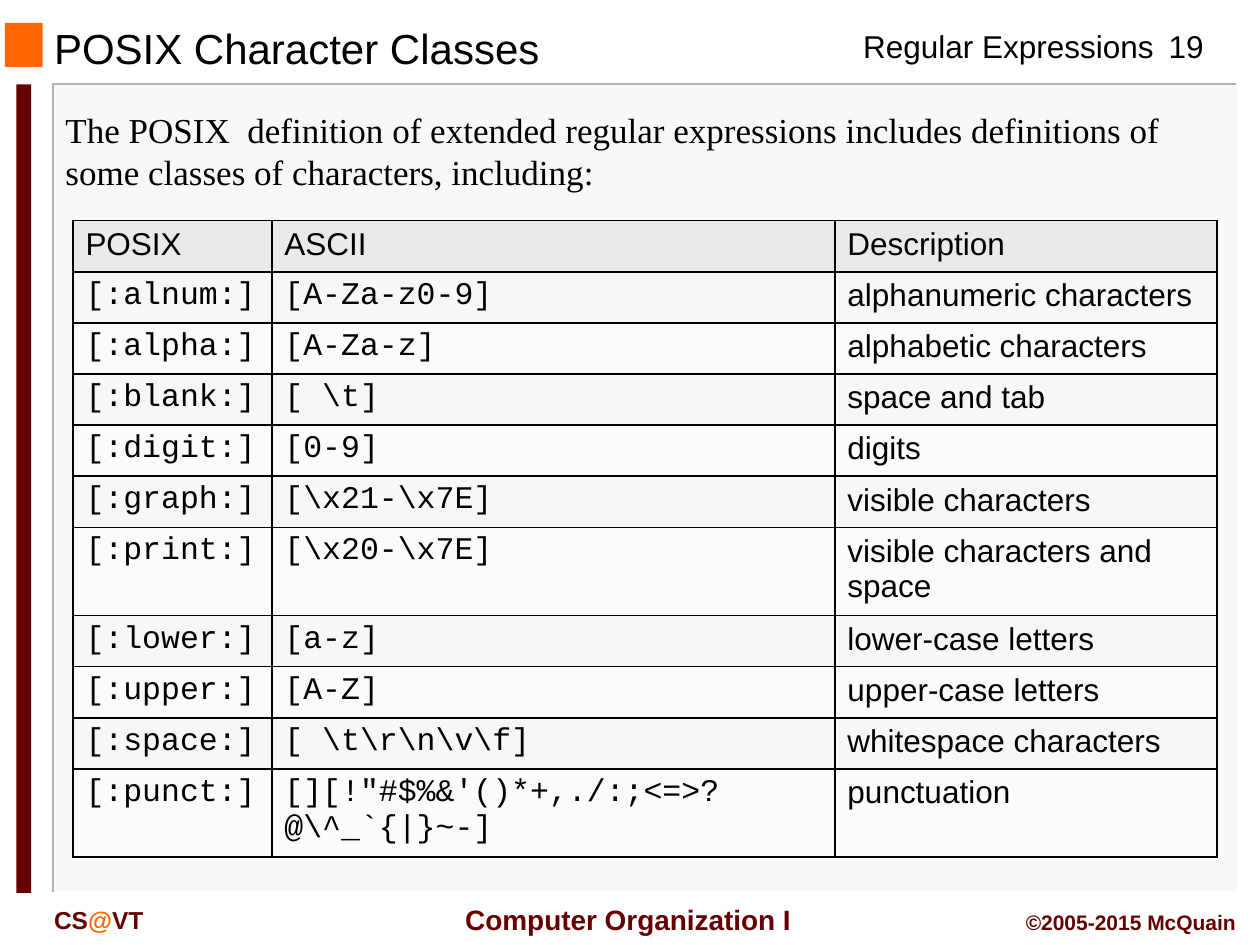
from pptx import Presentation
from pptx.dml.color import RGBColor
from pptx.enum.shapes import MSO_SHAPE
from pptx.enum.text import MSO_ANCHOR, PP_ALIGN
from pptx.oxml import parse_xml
from pptx.oxml.ns import nsdecls
from pptx.util import Cm, Pt

HUES = {
    "ink": "000000", "white": "FFFFFF", "panel": "F8F8F8", "edge": "B2B2B2",
    "orange": "FF6600", "maroon": "660000",
    "head": "EAEAEA", "odd": "F7F7F7", "even": "FBFBFB",
}

ROWS = [
    ("POSIX", "ASCII", "Description"),
    ("[:alnum:]", "[A-Za-z0-9]", "alphanumeric characters"),
    ("[:alpha:]", "[A-Za-z]", "alphabetic characters"),
    ("[:blank:]", r"[ \t]", "space and tab"),
    ("[:digit:]", "[0-9]", "digits"),
    ("[:graph:]", r"[\x21-\x7E]", "visible characters"),
    ("[:print:]", r"[\x20-\x7E]", "visible characters and space"),
    ("[:lower:]", "[a-z]", "lower-case letters"),
    ("[:upper:]", "[A-Z]", "upper-case letters"),
    ("[:space:]", r"[ \t\r\n\v\f]", "whitespace characters"),
    ("[:punct:]", r"""[][!"#$%&'()*+,./:;<=>?@\^_`{|}~-]""", "punctuation"),
]
TALL = {6, 10}  # rows whose text takes two lines


def hue(name):
    return RGBColor.from_string(HUES[name])


def write(para, text, font="Arial", size=18, color="ink", bold=False):
    run = para.add_run()
    run.text = text
    run.font.name = font
    run.font.size = Pt(size)
    run.font.bold = bold
    run.font.color.rgb = hue(color)


class Page:
    """Holds the table style and the current slide."""
    mono = "Courier New"
    rule = 12700  # cell border width, EMU

    def __init__(self, slide):
        self.slide = slide
        self.shapes = slide.shapes

    def block(self, x, y, w, h, color):
        box = self.shapes.add_shape(MSO_SHAPE.RECTANGLE, Cm(x), Cm(y), Cm(w), Cm(h))
        box.shadow.inherit = False
        box.fill.solid()
        box.fill.fore_color.rgb = hue(color)
        box.line.fill.background()

    def edge(self, points, color):
        start, *rest = [(Cm(x), Cm(y)) for x, y in points]
        pen = self.shapes.build_freeform(*start)
        pen.add_line_segments(rest, close=False)
        line = pen.convert_to_shape()
        line.shadow.inherit = False
        line.fill.background()
        line.line.color.rgb = hue(color)
        line.line.width = Pt(1)

    def label(self, x, y, w, h, *parts, align=PP_ALIGN.LEFT,
              anchor=MSO_ANCHOR.TOP, wrap=True, **style):
        """Each part is a string, or a string with its own colour."""
        frame = self.shapes.add_textbox(Cm(x), Cm(y), Cm(w), Cm(h)).text_frame
        frame.word_wrap = wrap
        frame.vertical_anchor = anchor
        para = frame.paragraphs[0]
        para.alignment = align
        for part in parts:
            if isinstance(part, tuple):
                write(para, part[0], **{**style, "color": part[1]})
            else:
                write(para, part, **style)

    def border(self, cell):
        props = cell._tc.get_or_add_tcPr()
        for spot, side in enumerate("LRTB"):
            props.insert(spot, parse_xml(
                f'<a:ln{side} {nsdecls("a")} w="{self.rule}"><a:solidFill>'
                f'<a:srgbClr val="{HUES["ink"]}"/></a:solidFill></a:ln{side}>'))

    def grid(self, x, y, widths, rows):
        highs = [1.78 if i in TALL else 1.03 for i in range(len(rows))]
        table = self.shapes.add_table(len(rows), len(widths), Cm(x), Cm(y),
                                      Cm(sum(widths)), Cm(sum(highs))).table
        for col, wide in zip(table.columns, widths):
            col.width = Cm(wide)
        for i, (row, high) in enumerate(zip(table.rows, highs)):
            row.height = Cm(high)
            shade = "head" if i == 0 else "odd" if i % 2 else "even"
            for j, cell in enumerate(row.cells):
                cell.fill.solid()
                cell.fill.fore_color.rgb = hue(shade)
                self.border(cell)
                code = i > 0 and j < 2
                write(cell.text_frame.paragraphs[0], rows[i][j],
                      font=self.mono if code else "Arial")


def main():
    deck = Presentation()
    deck.slide_width, deck.slide_height = Cm(25.4), Cm(19.05)
    page = Page(deck.slides.add_slide(deck.slide_layouts[6]))

    # Panel with its dark and light edges
    top, foot = 1.7, 17.98
    page.block(1.09, top, 23.88, foot - top, "panel")
    page.edge([(24.92, top), (1.07, top), (1.07, foot)], "edge")
    page.edge([(24.97, top), (24.97, foot), (1.12, foot)], "white")

    # Corner square and side bar
    page.block(0.1, 0.46, 0.76, 0.89, "orange")
    page.block(0.33, top, 0.3, 16.3, "maroon")

    # Header
    page.label(17.15, 0.43, 6.43, 1.02, "Regular Expressions", wrap=False)
    page.label(23.06, 0.43, 1.7, 1.02, "19", align=PP_ALIGN.CENTER)
    page.label(0.84, 0.48, 16.08, 0.97, "POSIX Character Classes",
               anchor=MSO_ANCHOR.MIDDLE, size=24)

    # Footer
    note = {"color": "maroon", "bold": True}
    page.label(8.89, 18.06, 7.39, 0.94, " Computer Organization I", wrap=False,
               align=PP_ALIGN.CENTER, anchor=MSO_ANCHOR.MIDDLE, size=16, **note)
    page.label(0.84, 18.11, 3.81, 0.84, "CS", ("@", "orange"), "VT", size=14, **note)
    page.label(19.89, 18.21, 5.28, 0.76, "©2005-2015 McQuain",
               align=PP_ALIGN.RIGHT, size=12, **note)

    # Body
    page.label(1.07, 2.06, 23.93, 1.96,
               "The POSIX  definition of extended regular expressions includes "
               "definitions of some classes of characters, including:",
               font="Times New Roman", size=20)
    page.grid(1.47, 4.45, [4.01, 11.35, 7.7], ROWS)

    deck.save("out.pptx")


if __name__ == "__main__":
    main()
